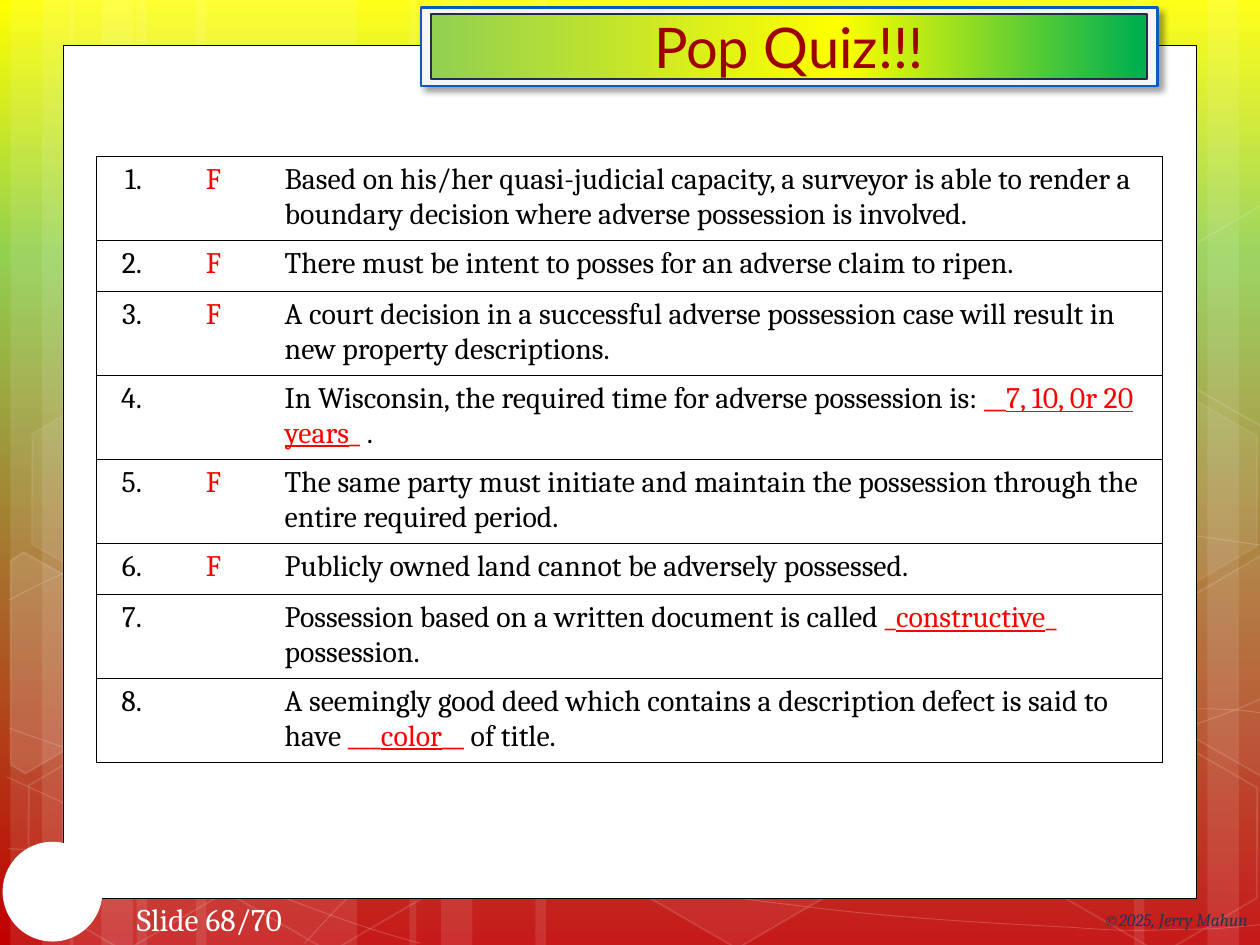
from pptx import Presentation
from pptx.dml.color import RGBColor
from pptx.enum.shapes import MSO_SHAPE
from pptx.enum.text import MSO_ANCHOR, MSO_AUTO_SIZE, PP_ALIGN
from pptx.oxml.ns import qn
from pptx.util import Pt
from lxml.etree import SubElement

WHITE = RGBColor(0xFF, 0xFF, 0xFF)
BLACK = RGBColor(0x00, 0x00, 0x00)
RED = RGBColor(0xFF, 0x00, 0x00)
SMOKE = RGBColor(0xF5, 0xF5, 0xF5)
BLUE = RGBColor(0x0E, 0x58, 0xC4)
NAVY = RGBColor(0x20, 0x2D, 0x4B)
SLATE = RGBColor(0x25, 0x33, 0x56)
MAROON = RGBColor(0x9E, 0x00, 0x00)
YELLOW = RGBColor(0xFF, 0xFF, 0x00)
LIME = RGBColor(0x92, 0xD0, 0x50)
GREEN = RGBColor(0x00, 0xB0, 0x50)
CRIMSON = RGBColor(0xC0, 0x00, 0x00)
SERIF = "Cambria"

BANDS = [(78, 126), (6, 36), (24, 60), (112, 126), (40, 36), (58, 60),
         (528, 126), (690, 36), (648, 60), (306, 222), (234, 36), (252, 60)]
CURVES = [
    [(5, 485), (44, 487), (83, 489), (137, 488), (191, 487), (258, 486), (330, 479),
     (402, 472), (504, 458), (570, 444), (636, 431), (703, 409), (725, 397)],
    [(5, 343), (26, 332), (47, 321), (87, 310), (128, 300), (186, 284), (250, 279),
     (314, 274), (392, 273), (471, 279), (550, 284), (682, 307), (725, 312)],
    [(4, 444), (91, 484), (178, 523), (240, 539)],
    [(5, 416), (27, 424), (50, 432), (92, 444), (134, 454), (197, 472), (257, 485),
     (317, 497), (392, 510), (452, 517), (512, 525), (576, 528), (614, 530),
     (652, 533), (662, 531), (680, 531), (699, 531), (712, 529), (725, 528)],
    [(174, 539), (187, 525), (200, 510), (217, 498), (235, 485), (259, 470), (279, 460),
     (300, 450), (312, 446), (338, 438), (364, 431), (413, 421), (438, 416),
     (464, 411), (467, 411), (490, 410), (512, 408), (547, 405), (572, 405),
     (597, 404), (638, 405), (638, 405), (654, 405), (670, 405), (686, 405),
     (699, 405), (711, 406), (718, 407), (724, 408), (722, 407), (724, 408)],
]
HEXES = [(240.5, 26, 4, 8), (358, 424, 6, 12), (8, 425.5, 0, 12), (10, 224.5, 7, 8),
         (125.5, 426, 0, 12), (600.5, 427, 0, 12), (600.5, 226, 7, 8)]
PARTS = [
    ([(6, 320.5), (13.5, 315.5), (69, 347), (68.5, 410.5), (14.5, 442), (6, 437)], 10),
    ([(666.5, 349), (720.5, 317.5), (726.5, 321), (726.5, 441.5), (721.5, 444), (666.5, 412.5)], 4),
    ([(666.5, 149), (720.5, 117.5), (727, 121), (726.5, 241), (721.5, 244), (666.5, 212.5)], 0),
]
TALL, LOW = 48, 29.2
ROWS = [
    (TALL, "F", ["Based on his/her quasi-judicial capacity, a surveyor is able to render a "
                 "boundary decision where adverse possession is involved."]),
    (LOW, "F", ["There must be intent to posses for an adverse claim to ripen."]),
    (TALL, "F", ["A court decision in a successful adverse possession case will result in "
                 "new property descriptions."]),
    (TALL, "", ["In Wisconsin, the required time for adverse possession is: ",
                "__", "7, 10, 0r 20 years", "_", " ."]),
    (TALL, "F", ["The same party must initiate and maintain the possession through the "
                 "entire required period."]),
    (LOW, "F", ["Publicly owned land cannot be adversely possessed."]),
    (TALL, "", ["Possession based on a written document is called ",
                "_", "constructive", "_", " possession."]),
    (TALL, "", ["A seemingly good deed which contains a description defect is said to have ",
                "___", "color", "__", " of title."]),
]


def shade(fill, root, stops, angle):
    """Give a fill a linear gradient with any number of stops."""
    fill.gradient()
    fill.gradient_angle = angle
    bar = root.xpath(".//a:gsLst")[0]
    for old in list(bar):
        bar.remove(old)
    for pos, color in stops:
        stop = SubElement(bar, qn("a:gs"), pos=str(pos * 1000))
        SubElement(stop, qn("a:srgbClr"), val=str(color))


def fade(shape, route, share):
    """Set the opacity, in percent, of a solid colour."""
    for color in shape.element.xpath(f"p:spPr/{route}a:solidFill/a:srgbClr"):
        SubElement(color, qn("a:alpha"), val=str(share * 1000))


def paint(shape, fill=None, line=None, width=1, body=100, edge=100):
    """Set fill, line and opacity of a shape."""
    shape.shadow.inherit = False
    if fill is None:
        shape.fill.background()
    else:
        shape.fill.solid()
        shape.fill.fore_color.rgb = fill
    if line is None:
        shape.line.fill.background()
    else:
        shape.line.color.rgb = line
        shape.line.width = Pt(width)
    for route, share in (("", body), ("a:ln/", edge)):
        if share < 100:
            fade(shape, route, share)


def block(slide, kind, box, **look):
    """Add a painted preset shape."""
    shape = slide.shapes.add_shape(kind, *map(Pt, box))
    paint(shape, **look)
    return shape


def trace(slide, dots, close):
    """Add a freeform through points."""
    spots = [(Pt(x), Pt(y)) for x, y in dots]
    pen = slide.shapes.build_freeform(*spots[0], scale=1)
    pen.add_line_segments(spots[1:], close=close)
    return pen.convert_to_shape()


def bend(shape):
    """Turn each three straight segments into one cubic curve."""
    route = shape.element.xpath(".//a:path")[0]
    legs = route.findall(qn("a:lnTo"))
    for i in range(0, len(legs), 3):
        curve = SubElement(route, qn("a:cubicBezTo"))
        for leg in legs[i:i + 3]:
            curve.append(leg[0])
            route.remove(leg)
    return shape


def write(para, text, size, color, face=SERIF, under=None, slant=None):
    """Add one run to a paragraph."""
    run = para.add_run()
    run.text = text
    font = run.font
    font.name, font.size, font.color.rgb = face, Pt(size), color
    font.underline, font.italic = under, slant


def label(slide, box, text, size, color, align, slant=None):
    """Add a one-line text box."""
    frame = slide.shapes.add_textbox(*map(Pt, box)).text_frame
    frame.word_wrap = True
    frame.vertical_anchor = MSO_ANCHOR.MIDDLE
    frame.paragraphs[0].alignment = align
    write(frame.paragraphs[0], text, size, color, slant=slant)


def scene(slide):
    """Draw the backdrop of bands, curves and hexagons."""
    shade(slide.background.fill, slide.element,
          [(0, YELLOW), (27, LIME), (100, CRIMSON)], 270)
    for left, width in BANDS:
        block(slide, MSO_SHAPE.RECTANGLE, (left, 0, width, 540), fill=WHITE, body=10)
    for knots in CURVES:
        paint(bend(trace(slide, knots, False)), line=WHITE, width=0.5, edge=20)
    for left, top, body, edge in HEXES:
        tile = block(slide, MSO_SHAPE.HEXAGON, (left, top, 126, 109.5),
                     fill=WHITE if body else None, line=WHITE, body=body, edge=edge)
        tile.adjustments[0], tile.adjustments[1] = 0.285, 1.155
        tile.rotation = 30
    for dots, body in PARTS:
        paint(trace(slide, dots, True), fill=WHITE if body else None, line=WHITE,
              body=body, edge=12)


def banner(slide):
    """Draw the framed title."""
    frame = block(slide, MSO_SHAPE.RECTANGLE, (240.5, 4.3, 421, 44.7),
                  fill=SMOKE, line=BLUE, width=1.25)
    glow = SubElement(frame.element.xpath("p:spPr/a:effectLst")[0], qn("a:outerShdw"),
                      blurRad=str(Pt(4)), dist=str(Pt(3)), dir="2700000", algn="tl")
    tone = SubElement(glow, qn("a:srgbClr"), val=str(BLACK))
    SubElement(tone, qn("a:alpha"), val="40000")
    title = slide.shapes.title
    frame.element.addnext(title.element)
    title.left, title.top, title.width, title.height = map(Pt, (246.25, 8, 409, 37))
    shade(title.fill, title.element, [(0, LIME), (57, YELLOW), (99, GREEN)], 0)
    title.line.color.rgb = NAVY
    title.line.width = Pt(1.25)
    text = title.text_frame
    text.auto_size = MSO_AUTO_SIZE.NONE
    text.vertical_anchor = MSO_ANCHOR.MIDDLE
    text.paragraphs[0].alignment = PP_ALIGN.CENTER
    write(text.paragraphs[0], "Pop Quiz!!!", 32, MAROON, face="Lato")


def rule(cell, sides):
    """Draw the named borders of a cell and clear the others."""
    props = cell._tc.get_or_add_tcPr()
    for side in "LRTB":
        line = SubElement(props, qn(f"a:ln{side}"), w=str(Pt(0.75)))
        if side in sides:
            SubElement(SubElement(line, qn("a:solidFill")), qn("a:srgbClr"), val=str(BLACK))
        else:
            SubElement(line, qn("a:noFill"))
    cell.fill.background()


def quiz(slide):
    """Build the table of questions and answers."""
    total = sum(row[0] for row in ROWS)
    table = slide.shapes.add_table(len(ROWS), 3, Pt(55.25), Pt(89.4),
                                   Pt(609.3), Pt(total)).table
    table.first_row = table.horz_banding = False
    for col, width in zip(table.columns, (33.1, 67.2, 509)):
        col.width = Pt(width)
    aligns = (PP_ALIGN.RIGHT, PP_ALIGN.CENTER, PP_ALIGN.LEFT)
    for i, (height, mark, parts) in enumerate(ROWS):
        table.rows[i].height = Pt(height)
        texts = ([f"{i + 1}."], [mark] if mark else [], parts)
        for j, runs in enumerate(texts):
            cell = table.cell(i, j)
            rule(cell, ("LTB", "TB", "RTB")[j])
            para = cell.text_frame.paragraphs[0]
            para.alignment = aligns[j]
            para.font.size = Pt(17)
            for k, text in enumerate(runs):
                hot = j == 1 or 0 < k < 4
                write(para, text, 17, RED if hot else BLACK, under=True if k == 2 else None)


def main():
    """Build the slide and save it."""
    deck = Presentation()
    deck.slide_width, deck.slide_height = Pt(720), Pt(540)
    slide = deck.slides.add_slide(deck.slide_layouts[5])
    scene(slide)
    block(slide, MSO_SHAPE.RECTANGLE, (36, 26, 648, 487.2), fill=WHITE, line=BLACK, width=0.5)
    block(slide, MSO_SHAPE.OVAL, (1.5, 481, 57, 57), fill=WHITE)
    label(slide, (53.5, 510.5, 132.5, 29), "Slide 68/70", 18, WHITE, PP_ALIGN.CENTER)
    label(slide, (588, 511, 132, 29), "©2025, Jerry Mahun", 10, SLATE, PP_ALIGN.RIGHT, True)
    banner(slide)
    quiz(slide)
    deck.save("out.pptx")


if __name__ == "__main__":
    main()
